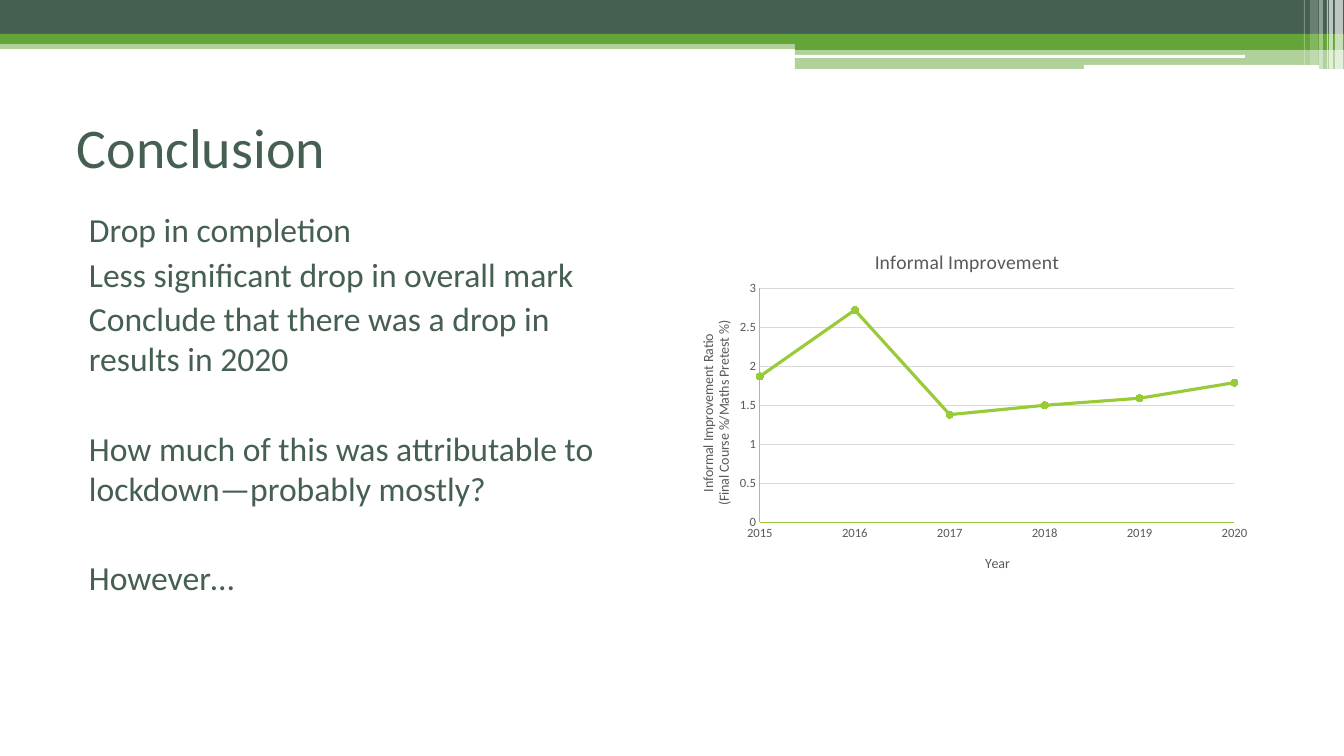
"""Build the Conclusion slide with its banner, text and improvement line chart."""
from dataclasses import dataclass

from lxml.etree import SubElement
from pptx import Presentation
from pptx.chart.data import CategoryChartData
from pptx.dml.color import RGBColor
from pptx.enum.chart import XL_CHART_TYPE, XL_MARKER_STYLE, XL_TICK_MARK
from pptx.enum.shapes import MSO_SHAPE
from pptx.enum.text import MSO_ANCHOR
from pptx.oxml import parse_xml
from pptx.oxml.ns import nsdecls, qn
from pptx.util import Emu, Pt

PX = 12192000 / 1344


@dataclass(frozen=True)
class Theme:
    font: str = "Calibri"
    dark: str = "455F51"
    green: str = "63A537"
    lime: str = "99CB38"
    white: str = "FFFFFF"
    chart_text: str = "595959"
    grid: str = "D9D9D9"
    axis: str = "B3B3B3"
    title_size: int = 40
    body_size: int = 24
    chart_title_size: int = 14
    axis_title_size: int = 10
    tick_size: int = 9


theme = Theme()


def add_text(frame, text, size, color, space_before=None):
    """Append a formatted paragraph to a text frame."""
    paragraph = frame.add_paragraph() if frame.text else frame.paragraphs[0]
    if space_before is not None:
        paragraph.space_before = Pt(space_before)
    run = paragraph.add_run()
    run.text = text
    run.font.name = theme.font
    run.font.size = Pt(size)
    run.font.bold = False
    run.font.color.rgb = RGBColor.from_string(color)


def set_layout(parent, index, **places):
    """Give a chart part a fixed place, in fractions of the chart."""
    for old_layout in parent.findall(qn("c:layout")):
        parent.remove(old_layout)
    layout = parse_xml(f"<c:layout {nsdecls('c')}><c:manualLayout/></c:layout>")
    for name, value in places.items():
        SubElement(layout[0], qn(f"c:{name}"), val=str(value))
    parent.insert(index, layout)


presentation = Presentation()
presentation.slide_width = Emu(round(1344 * PX))
presentation.slide_height = Emu(round(756 * PX))
slide = presentation.slides.add_slide(presentation.slide_layouts[6])

banner = [
    (0, 40, 1344, 9, theme.green, 50),
    (0, 0, 1344, 34, theme.dark, 100),
    (0, 34, 1344, 10, theme.green, 100),
    (795, 39, 549, 11, theme.green, 100),
    (795, 49, 549, 20, theme.green, 50),
    (795, 55, 450, 3, theme.white, 100),
    (1084, 65, 235, 4, theme.white, 100),
    (1335, 0, 8, 69, theme.white, 65),
    (1329, 0, 4, 69, theme.white, 65),
    (1327, 0, 1, 69, theme.white, 60),
    (1319, 0, 4, 69, theme.white, 40),
    (1310, 0, 8, 65, theme.white, 20),
    (1304, 0, 1, 65, theme.white, 30),
]
for left, top, width, height, color, opacity in banner:
    rounded = color == theme.white and opacity == 100
    kind = MSO_SHAPE.ROUNDED_RECTANGLE if rounded else MSO_SHAPE.RECTANGLE
    shape = slide.shapes.add_shape(
        kind, *(Emu(round(n * PX)) for n in (left, top, width, height))
    )
    shape.shadow.inherit = False
    shape.line.fill.background()
    shape.fill.solid()
    shape.fill.fore_color.rgb = RGBColor.from_string(color)
    if opacity < 100:
        fill_color = shape.element.spPr.find(f".//{qn('a:srgbClr')}")
        SubElement(fill_color, qn("a:alpha"), val=str(opacity * 1000))

title_box = slide.shapes.add_textbox(*(Emu(round(n * PX)) for n in (67, 87, 1210, 118)))
title_box.text_frame.word_wrap = True
title_box.text_frame.vertical_anchor = MSO_ANCHOR.MIDDLE
add_text(title_box.text_frame, "Conclusion", theme.title_size, theme.dark)

body_box = slide.shapes.add_textbox(*(Emu(round(n * PX)) for n in (67, 204, 567, 455)))
body_box.text_frame.word_wrap = True
body_box.text_frame.margin_left = Emu(round(22 * PX))
for line, space_before in [
    ("Drop in completion", 3),
    ("Less significant drop in overall mark", 3),
    ("Conclude that there was a drop in results in 2020", 3),
    ("How much of this was attributable to lockdown—probably mostly?", 35),
    ("However…", 35),
]:
    add_text(body_box.text_frame, line, theme.body_size, theme.dark, space_before)

chart_data = CategoryChartData()
chart_data.categories = [str(year) for year in range(2015, 2021)]
chart_data.add_series("Series 1", (1.87, 2.72, 1.38, 1.5, 1.59, 1.79))
chart = slide.shapes.add_chart(
    XL_CHART_TYPE.LINE_MARKERS,
    *(Emu(round(n * PX)) for n in (672, 226, 586, 366)),
    chart_data,
).chart
chart.has_legend = False
chart.font.name = theme.font
chart.font.size = Pt(theme.axis_title_size)
chart.plots[0].vary_by_categories = False

year_axis, ratio_axis = chart.category_axis, chart.value_axis
ratio_axis.minimum_scale, ratio_axis.maximum_scale = 0, 3
ratio_axis.major_unit = 0.5
ratio_axis.tick_labels.number_format = "General"
ratio_axis.tick_labels.number_format_is_linked = False
ratio_axis.major_gridlines.format.line.color.rgb = RGBColor.from_string(theme.grid)
ratio_axis.major_gridlines.format.line.width = Pt(0.75)
ratio_axis._element.find(qn("c:majorUnit")).addprevious(
    parse_xml(f"<c:crossBetween {nsdecls('c')} val='midCat'/>")
)

for axis, color in ((year_axis, theme.lime), (ratio_axis, theme.axis)):
    axis.major_tick_mark = axis.minor_tick_mark = XL_TICK_MARK.NONE
    axis.format.line.color.rgb = RGBColor.from_string(color)
    axis.format.line.width = Pt(0.75)
    axis.tick_labels.font.name = theme.font
    axis.tick_labels.font.size = Pt(theme.tick_size)
    axis.tick_labels.font.color.rgb = RGBColor.from_string(theme.chart_text)

for owner, lines, size, x, y in [
    (chart, ["Informal Improvement"], theme.chart_title_size, 0.34, 0.05),
    (year_axis, ["Year"], theme.axis_title_size, 0.53, 0.89),
    (ratio_axis, ["Informal Improvement Ratio", "(Final Course %/Maths Pretest %)"],
     theme.axis_title_size, 0.04, 0.25),
]:
    owner.has_title = True
    title = owner.chart_title if owner is chart else owner.axis_title
    for line in lines:
        add_text(title.text_frame, line, size, theme.chart_text)
    set_layout(title._element, 1, xMode="edge", yMode="edge", x=x, y=y)
ratio_axis.axis_title.text_frame._element.find(qn("a:bodyPr")).set("rot", "-5400000")

plot_area = chart.plots[0]._element.getparent()
set_layout(plot_area, 0, layoutTarget="inner", xMode="edge", yMode="edge",
           x=0.15, y=0.17, w=0.81, h=0.64)

series = chart.plots[0].series[0]
series.smooth = False
series.format.line.color.rgb = RGBColor.from_string(theme.lime)
series.format.line.width = Pt(2.25)
series.marker.style = XL_MARKER_STYLE.CIRCLE
series.marker.size = 5
series.marker.format.fill.solid()
series.marker.format.fill.fore_color.rgb = RGBColor.from_string(theme.lime)
series.marker.format.line.color.rgb = RGBColor.from_string(theme.lime)

presentation.save("out.pptx")
